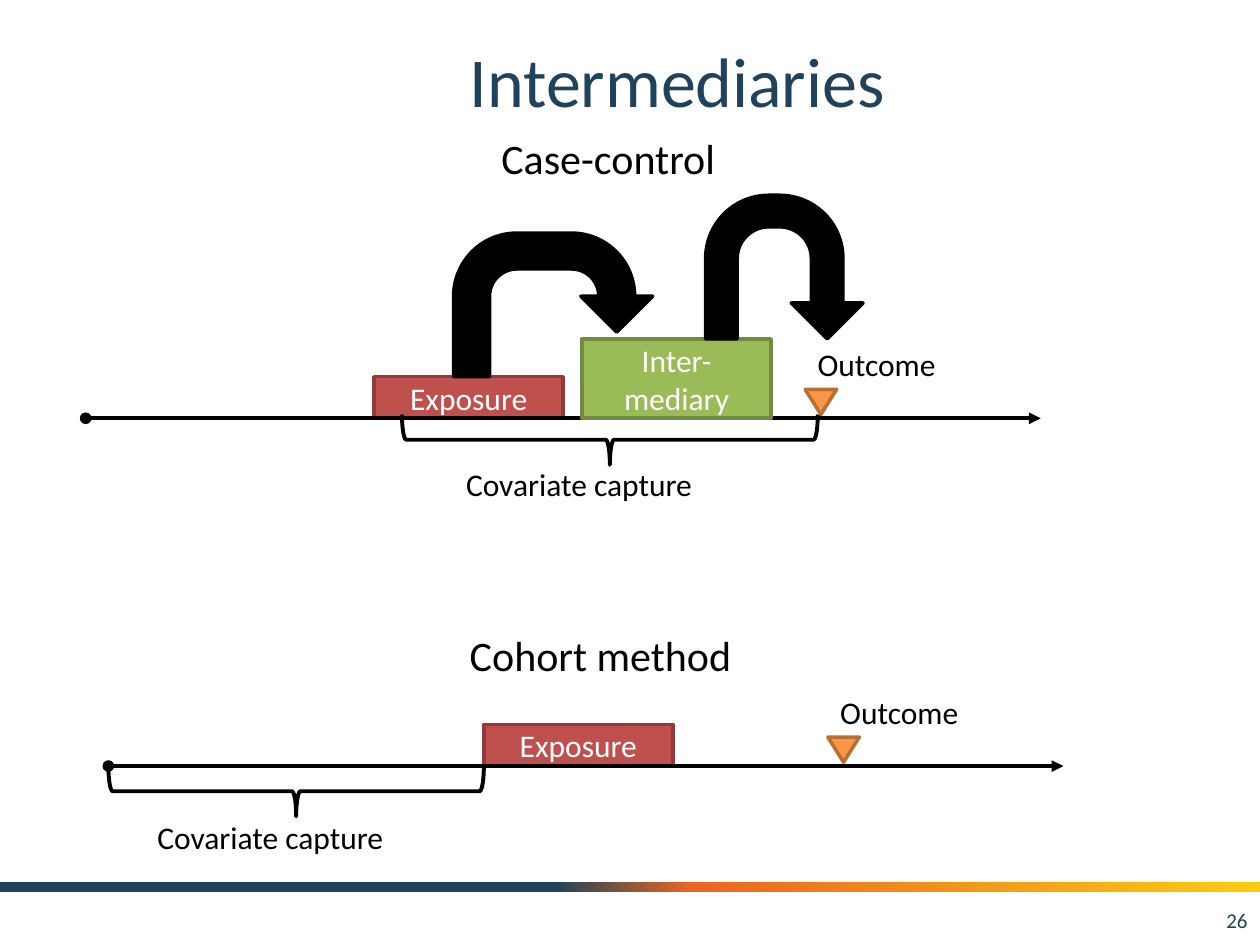
import copy

import lxml.etree
import pptx
import pptx.dml.color
import pptx.enum.shapes
import pptx.enum.text
import pptx.oxml.ns
import pptx.util

COLORS = {
    "navy": "20425A", "orange": "EB6622", "yellow": "FCCB10",
    "black": "000000", "white": "FFFFFF",
    "red": "C0504D", "red_edge": "8E3B39",
    "green": "9BBB59", "green_edge": "738A42",
    "amber": "F79646", "amber_edge": "B76F34",
}
RGB = {k: pptx.dml.color.RGBColor.from_string(v) for k, v in COLORS.items()}
SHAPE = pptx.enum.shapes.MSO_SHAPE
ALIGN = pptx.enum.text.PP_ALIGN
ANCHOR = pptx.enum.text.MSO_ANCHOR
qn = pptx.oxml.ns.qn

prs = pptx.Presentation()
prs.slide_width = pptx.util.Inches(10)
prs.slide_height = pptx.util.Inches(7.5)
s = prs.slides.add_slide(prs.slide_layouts[5])

# Grid of 10 columns by 7.5 rows
COL = prs.slide_width / 10
ROW = prs.slide_height / 7.5


def add_shape(kind, x, y, w, h, fill=None, edge=None, weight=2):
    sp = s.shapes.add_shape(kind, int(x * COL), int(y * ROW), int(w * COL), int(h * ROW))
    sp.shadow.inherit = False
    if fill:
        sp.fill.solid()
        sp.fill.fore_color.rgb = RGB[fill]
    else:
        sp.fill.background()
    if edge:
        sp.line.color.rgb = RGB[edge]
        sp.line.width = pptx.util.Pt(weight)
    else:
        sp.line.fill.background()
    return sp


def write(sp, text, size, color, align=ALIGN.LEFT, wrap=True, anchor=ANCHOR.MIDDLE):
    tf = sp.text_frame
    tf.word_wrap = wrap
    tf.vertical_anchor = anchor
    p = tf.paragraphs[0]
    p.alignment = align
    r = p.add_run()
    r.text = text
    r.font.name = "Calibri"
    r.font.size = pptx.util.Pt(size)
    r.font.color.rgb = RGB[color]


# Footer band with a three-stop gradient
band = add_shape(SHAPE.RECTANGLE, 0, 7, 10, 0.08)
band.fill.gradient()
band.fill.gradient_angle = 0
gs_list = band._element.spPr.find(".//" + qn("a:gsLst"))
gs_list.append(copy.deepcopy(gs_list[0]))
stops = [(0.44, "navy"), (0.55, "orange"), (1, "yellow")]
for stop, (position, color) in zip(band.fill.gradient_stops, stops):
    stop.position = position
    stop.color.rgb = RGB[color]

# Title and page number
title = s.shapes.title
title.left, title.top = int(1.25 * COL), int(0.17 * ROW)
title.width, title.height = int(8.25 * COL), int(0.92 * ROW)
write(title, "Intermediaries", 40, "navy", ALIGN.CENTER)
number = s.shapes.add_textbox(int(7.67 * COL), int(7.1 * ROW), int(2.33 * COL), int(0.4 * ROW))
write(number, "26", 12, "navy", ALIGN.RIGHT)

# Timelines: start x, axis y, exposure x, brace (x, y, length), caption (x, y), heading (text, x, y, w)
timelines = [
    (0.68, 3.32, 2.97, (3.19, 3.29, 3.3), (3.6, 3.64), ("Case-control", 3.88, 1, 1.91)),
    (0.86, 6.08, 3.84, (0.86, 6.08, 2.98), (1.15, 6.44), ("Cohort method", 3.63, 4.95, 2.3)),
]
DEPTH = 0.4
for start, axis, exposure, (bx, by, length), (cx, cy), (name, hx, hy, hw) in timelines:
    sp = add_shape(SHAPE.RECTANGLE, exposure, axis - 0.33, 1.5, 0.33, "red", "red_edge")
    write(sp, "Exposure", 18, "white", ALIGN.CENTER)
    outcome = start + 5.71
    add_shape(SHAPE.FLOWCHART_MERGE, outcome, axis - 0.23, 0.25, 0.2, "amber", "amber_edge")

    # Brace turned to open upwards, placed around its centre
    brace = add_shape(SHAPE.RIGHT_BRACE, bx + (length - DEPTH) / 2, by - (length - DEPTH) / 2,
                      DEPTH, length, edge="black", weight=2.25)
    brace.rotation = 90

    # Time axis
    line = s.shapes.add_connector(pptx.enum.shapes.MSO_CONNECTOR.STRAIGHT,
                                  int(start * COL), int(axis * ROW),
                                  int((start + 7.58) * COL), int(axis * ROW))
    line.line.color.rgb = RGB["black"]
    line.line.width = pptx.util.Pt(2.25)
    sp_pr = line._element.spPr
    for tag, kind in (("a:headEnd", "oval"), ("a:tailEnd", "triangle")):
        lxml.etree.SubElement(sp_pr.find(qn("a:ln")), qn(tag), type=kind)
    lxml.etree.SubElement(sp_pr, qn("a:effectLst"))

    # Labels
    for text, x, y, w, h, size in (
        ("Covariate capture", cx, cy, 2.02, 0.4, 18),
        ("Outcome", outcome, axis - 0.63, 1.15, 0.4, 18),
        (name, hx, hy, hw, 0.5, 24),
    ):
        box = s.shapes.add_textbox(int(x * COL), int(y * ROW), int(w * COL), int(h * ROW))
        write(box, text, size, "black", wrap=False, anchor=ANCHOR.TOP)

# Intermediary on the case-control timeline, with the arrows through it
sp = add_shape(SHAPE.RECTANGLE, 4.62, 2.69, 1.5, 0.63, "green", "green_edge")
write(sp, "Inter-mediary", 18, "white", ALIGN.CENTER)
for x, y, w, shaft, reach in ((3.6, 1.85, 1.58, 0.25, 0.69), (5.6, 1.55, 1.25, 0.22, 1)):
    arrow = add_shape(SHAPE.U_TURN_ARROW, x, y, w, 1.14, "black", "black")
    for i, value in enumerate((shaft, 0.25, 0.25, 0.44, reach)):
        arrow.adjustments[i] = value

prs.save("out.pptx")
